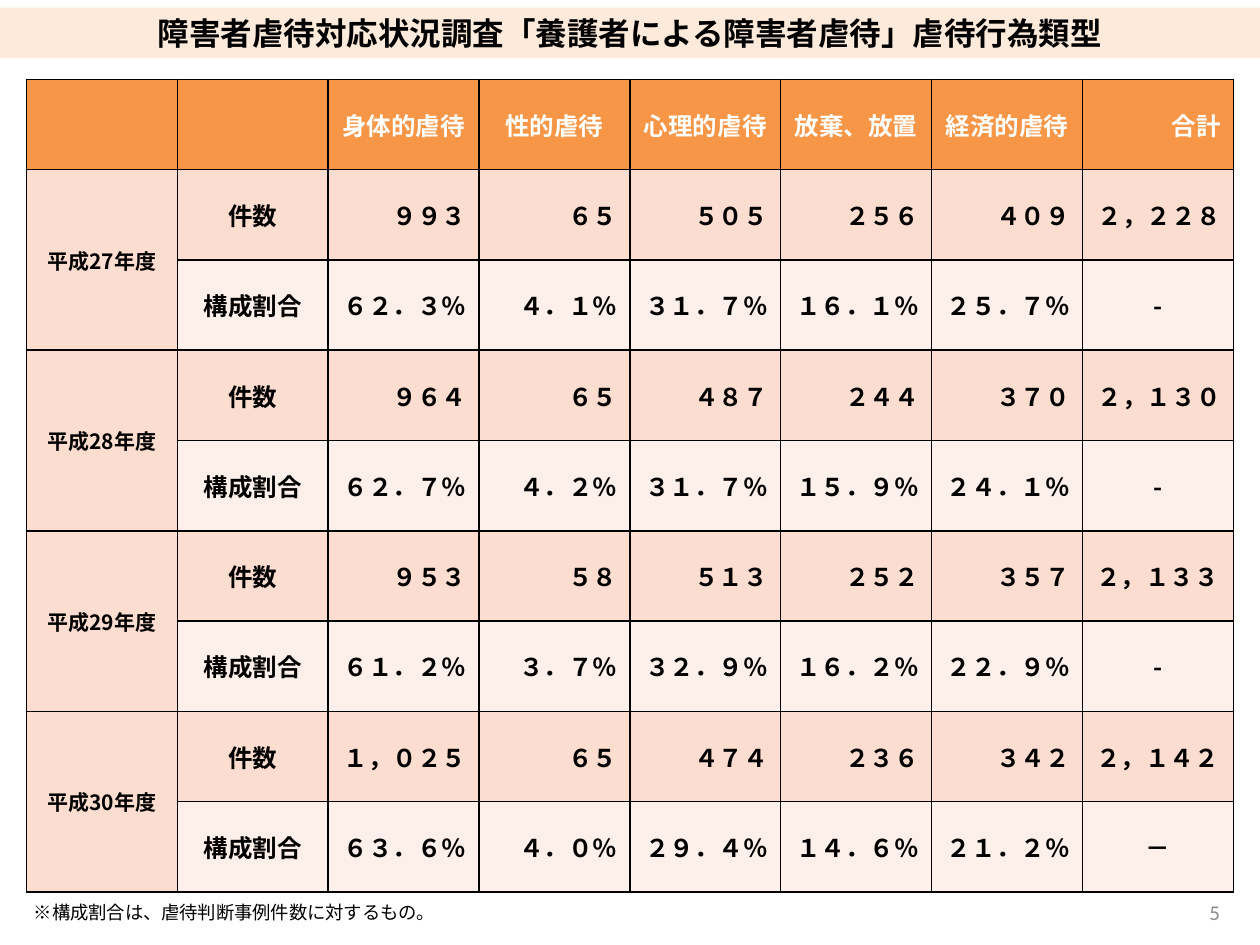
from lxml import etree
from pptx import Presentation
from pptx.dml.color import RGBColor
from pptx.enum import lang, text
from pptx.oxml import ns
from pptx.util import Inches, Pt

FONT = "Noto Sans CJK JP"
COLORS = {"header": "F79646", "count": "FCDDCF", "ratio": "FDEFE9", "band": "FDEADA",
          "ink": "000000", "white": "FFFFFF", "page": "8C8C8C"}
CENTER, RIGHT, LEFT = text.PP_ALIGN.CENTER, text.PP_ALIGN.RIGHT, text.PP_ALIGN.LEFT
MIDDLE = text.MSO_ANCHOR.MIDDLE

HEADINGS = ["", "", "身体的虐待", "性的虐待", "心理的虐待", "放棄、放置", "経済的虐待", "合計"]
# Year, counts, ratios, alignment of the total
YEARS = [
    ("平成27年度", ["９９３", "６５", "５０５", "２５６", "４０９", "２，２２８"],
     ["６２．３％", "４．１％", "３１．７％", "１６．１％", "２５．７％", "-"], RIGHT),
    ("平成28年度", ["９６４", "６５", "４８７", "２４４", "３７０", "２，１３０"],
     ["６２．７％", "４．２％", "３１．７％", "１５．９％", "２４．１％", "-"], RIGHT),
    ("平成29年度", ["９５３", "５８", "５１３", "２５２", "３５７", "２，１３３"],
     ["６１．２％", "３．７％", "３２．９％", "１６．２％", "２２．９％", "-"], CENTER),
    ("平成30年度", ["１，０２５", "６５", "４７４", "２３６", "３４２", "２，１４２"],
     ["６３．６％", "４．０％", "２９．４％", "１４．６％", "２１．２％", "－"], CENTER),
]


def rgb(name):
    return RGBColor.from_string(COLORS[name])


def write(frame, words, size, align, color="ink", bold=False, face=FONT):
    frame.text = words
    paragraph = frame.paragraphs[0]
    paragraph.alignment = align
    for run in paragraph.runs:
        font = run.font
        font.size, font.bold, font.name = Pt(size), bold, face
        font.color.rgb = rgb(color)
        font.language_id = lang.MSO_LANGUAGE_ID.JAPANESE
        east_asian = etree.Element(ns.qn("a:ea"), typeface=face)
        run._r.rPr.find(ns.qn("a:latin")).addnext(east_asian)


def add_borders(cell):
    properties = cell._tc.get_or_add_tcPr()
    for side in ("lnL", "lnR", "lnT", "lnB"):
        line = etree.SubElement(properties, ns.qn("a:" + side), w=str(Pt(1)))
        fill = etree.SubElement(line, ns.qn("a:solidFill"))
        etree.SubElement(fill, ns.qn("a:srgbClr"), val=COLORS["ink"])


def add_title(slide, left, top, width, height):
    title = slide.shapes.title
    title.left, title.top, title.width, title.height = left, top, width, height
    title.fill.solid()
    title.fill.fore_color.rgb = rgb("band")
    title.text_frame.auto_size = text.MSO_AUTO_SIZE.NONE
    title.text_frame.vertical_anchor = MIDDLE
    write(title.text_frame, "障害者虐待対応状況調査「養護者による障害者虐待」虐待行為類型",
          18, CENTER, bold=True)


def fill_row(table, row, words, aligns, fill, color="ink"):
    for column, (word, align) in enumerate(zip(words, aligns)):
        cell = table.cell(row, column)
        add_borders(cell)
        cell.fill.solid()
        cell.fill.fore_color.rgb = rgb(fill)
        cell.vertical_anchor = MIDDLE
        if word:
            size = 12 if row and column == 0 else 14
            write(cell.text_frame, word, size, align, color, bold=True)


def add_abuse_table(slide, left, top, width, height):
    rows, columns = 1 + 2 * len(YEARS), len(HEADINGS)
    table = slide.shapes.add_table(rows, columns, left, top, width, height).table
    for column in table.columns:
        column.width = width // columns
    for row in table.rows:
        row.height = height // rows

    fill_row(table, 0, HEADINGS, [CENTER] * 7 + [RIGHT], "header", "white")
    labels, numbers = [CENTER] * 2, [RIGHT] * 5
    for index, (year, counts, ratios, total_align) in enumerate(YEARS):
        row = 1 + 2 * index
        fill_row(table, row, [year, "件数"] + counts, labels + numbers + [total_align], "count")
        fill_row(table, row + 1, ["", "構成割合"] + ratios, labels + numbers + [CENTER], "ratio")
        table.cell(row, 0).merge(table.cell(row + 1, 0))


def add_caption(slide, box, words, size, align, **style):
    frame = slide.shapes.add_textbox(*box).text_frame
    frame.word_wrap = True
    frame.vertical_anchor = MIDDLE
    write(frame, words, size, align, **style)


def main():
    deck = Presentation()
    deck.slide_width, deck.slide_height = Inches(10), Inches(7.5)
    slide = deck.slides.add_slide(deck.slide_layouts.get_by_name("Title Only"))

    add_title(slide, 0, Inches(0.06), deck.slide_width, Inches(0.4))
    add_abuse_table(slide, Inches(0.21), Inches(0.63), Inches(9.58), Inches(6.45))

    # Footnote and page number
    add_caption(slide, (Inches(0.17), Inches(7.1), Inches(9.61), Inches(0.28)),
                "※構成割合は、虐待判断事例件数に対するもの。", 10.5, LEFT)
    add_caption(slide, (Inches(7.17), Inches(7.04), Inches(2.61), Inches(0.4)),
                "5", 12, RIGHT, color="page", face="Calibri")
    deck.save("out.pptx")


if __name__ == "__main__":
    main()
